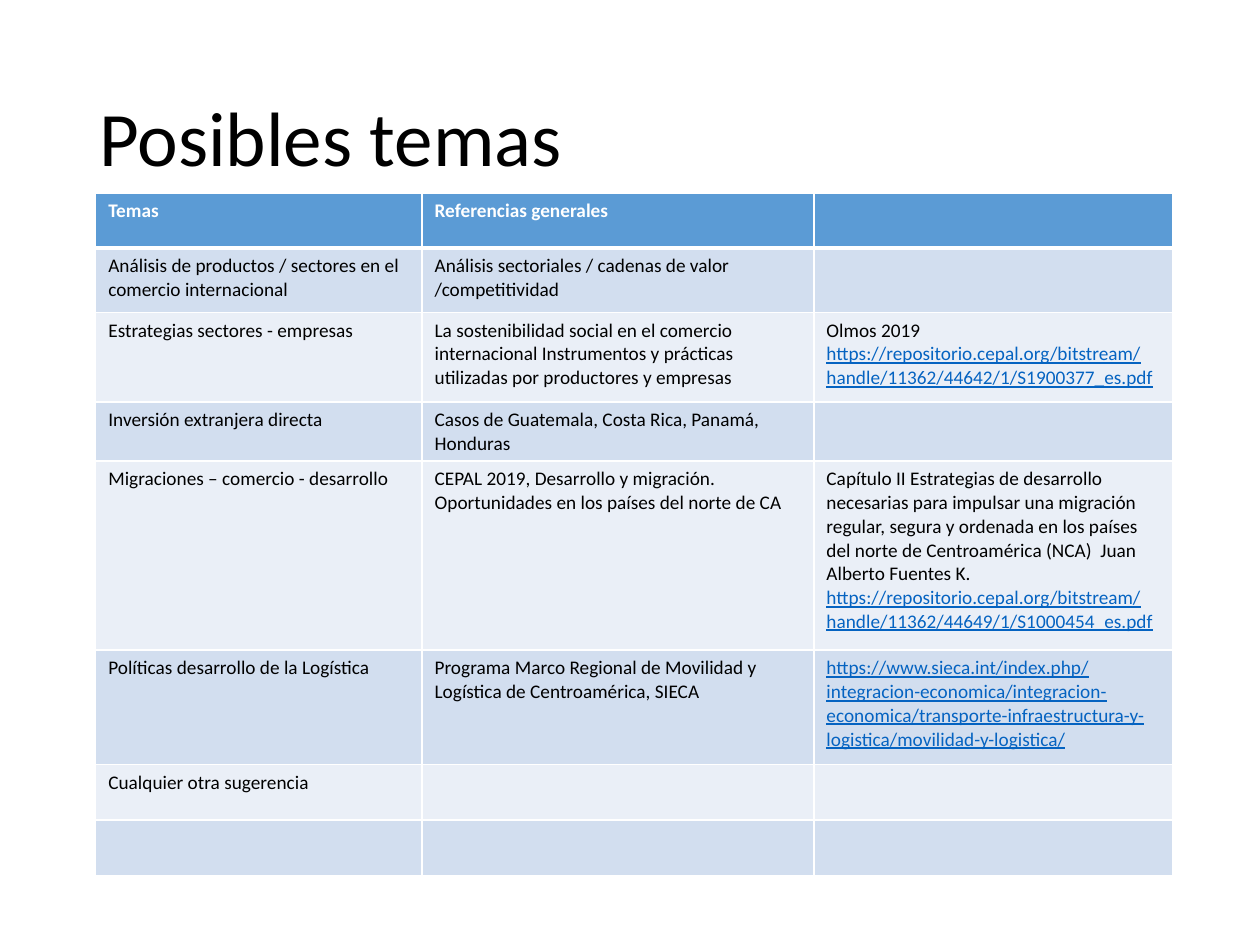
"""Build the slide that lists possible topics with their references."""
from dataclasses import dataclass

from lxml.etree import SubElement
from pptx import Presentation
from pptx.dml.color import RGBColor as Rgb
from pptx.enum.text import MSO_ANCHOR as Anchor
from pptx.oxml.ns import qn
from pptx.util import Inches, Pt


@dataclass(frozen=True)
class Theme:
    font: str = "Calibri"
    title_size: float = 44
    cell_size: float = 11
    ink: str = "000000"
    paper: str = "FFFFFF"
    link: str = "0563C1"
    header: str = "5B9BD5"
    bands: tuple[str, str] = ("D2DEEF", "EAEFF7")
    rule: float = 1
    header_rule: float = 3


@dataclass(frozen=True)
class Topic:
    name: str = ""
    reference: str = ""
    note: str = ""
    link: str = ""
    height: float = 0.44


THEME = Theme()
COLUMN_WIDTHS = (2.59, 3.11, 2.85)
REPOSITORY = "https://repositorio.cepal.org/bitstream/handle/11362/"
TOPICS = (
    Topic("Temas", "Referencias generales"),
    Topic("Análisis de productos / sectores en el comercio internacional",
          "Análisis sectoriales / cadenas de valor /competitividad", height=0.51),
    Topic("Estrategias sectores - empresas",
          "La sostenibilidad social en el comercio internacional Instrumentos "
          "y prácticas utilizadas por productores y empresas",
          "Olmos 2019", REPOSITORY + "44642/1/S1900377_es.pdf", 0.71),
    Topic("Inversión extranjera directa",
          "Casos de Guatemala, Costa Rica, Panamá, Honduras", height=0.47),
    Topic("Migraciones – comercio - desarrollo",
          "CEPAL 2019, Desarrollo y migración. Oportunidades en los países del norte de CA",
          "Capítulo II Estrategias de desarrollo necesarias para impulsar una migración "
          "regular, segura y ordenada en los países del norte de Centroamérica (NCA)  "
          "Juan Alberto Fuentes K.",
          REPOSITORY + "44649/1/S1000454_es.pdf", 1.5),
    Topic("Políticas desarrollo de la Logística",
          "Programa Marco Regional de Movilidad y Logística de Centroamérica, SIECA",
          link="https://www.sieca.int/index.php/integracion-economica/integracion-economica/"
               "transporte-infraestructura-y-logistica/movilidad-y-logistica/", height=0.91),
    Topic("Cualquier otra sugerencia"),
    Topic(),
)


def style_font(font, size: float, color: str, bold: bool = False) -> None:
    """Set the typeface, size, weight and colour of a font."""
    font.name, font.size, font.bold = THEME.font, Pt(size), bold
    font.color.rgb = Rgb.from_string(color)


def add_title(slide, text: str) -> None:
    """Place the slide title."""
    box = slide.shapes.add_textbox(Inches(0.69), Inches(0.4), Inches(8.62), Inches(1.45))
    frame = box.text_frame
    frame.word_wrap = True
    frame.vertical_anchor = Anchor.MIDDLE
    para = frame.paragraphs[0]
    para.text, para.line_spacing = text, 0.9
    style_font(para.font, THEME.title_size, THEME.ink)


def add_borders(cell, top: float, bottom: float) -> None:
    """Draw the four rules of a cell."""
    properties = cell._tc.get_or_add_tcPr()
    widths = {"lnL": THEME.rule, "lnR": THEME.rule, "lnT": top, "lnB": bottom}
    for tag, width in widths.items():
        line = SubElement(properties, qn(f"a:{tag}"), w=str(Pt(width)))
        fill = SubElement(line, qn("a:solidFill"))
        SubElement(fill, qn("a:srgbClr"), val=THEME.paper)


def fill_cell(cell, texts: list[str], row: int) -> None:
    """Write and style one cell according to its row."""
    is_header = row == 0
    add_borders(cell, THEME.header_rule if row == 1 else THEME.rule,
                THEME.header_rule if is_header else THEME.rule)
    cell.fill.solid()
    color = THEME.header if is_header else THEME.bands[(row - 1) % 2]
    cell.fill.fore_color.rgb = Rgb.from_string(color)
    cell.text = "\n".join(texts)
    for para in cell.text_frame.paragraphs:
        is_link = para.text.startswith("https://")
        ink = THEME.paper if is_header else THEME.link if is_link else THEME.ink
        style_font(para.font, THEME.cell_size, ink, is_header)
        para.font.underline = is_link


def add_topics(slide, topics: tuple[Topic, ...]) -> None:
    """Place the table of topics."""
    height = sum(topic.height for topic in topics)
    table = slide.shapes.add_table(
        len(topics), len(COLUMN_WIDTHS), Inches(0.76), Inches(1.53),
        Inches(sum(COLUMN_WIDTHS)), Inches(height)).table
    for column, width in zip(table.columns, COLUMN_WIDTHS):
        column.width = Inches(width)
    for row, topic in enumerate(topics):
        table.rows[row].height = Inches(topic.height)
        notes = [text for text in (topic.note, topic.link) if text]
        for column, texts in enumerate(([topic.name], [topic.reference], notes)):
            fill_cell(table.cell(row, column), texts, row)


def main() -> None:
    """Build and save the deck."""
    deck = Presentation()
    deck.slide_width, deck.slide_height = Inches(10), Inches(7.5)
    slide = deck.slides.add_slide(deck.slide_layouts[6])
    add_title(slide, "Posibles temas")
    add_topics(slide, TOPICS)
    deck.save("out.pptx")


if __name__ == "__main__":
    main()
